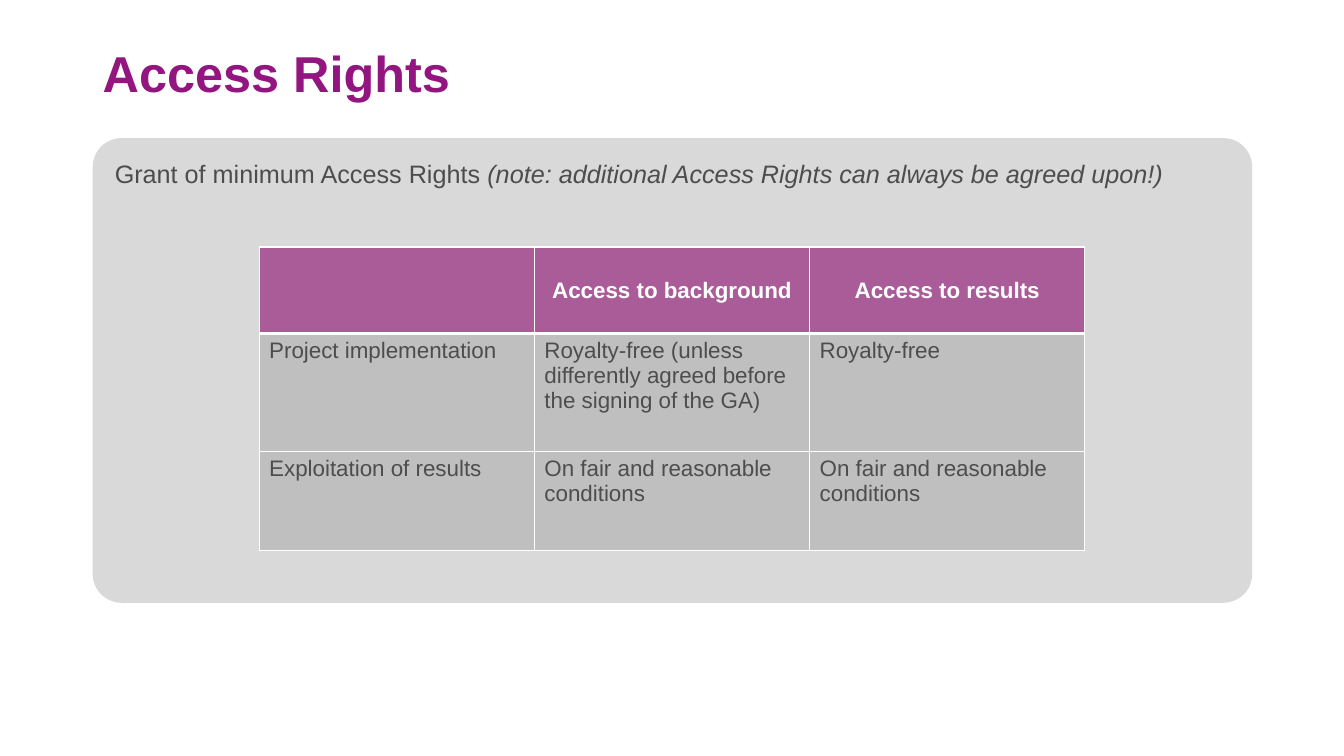
import pptx
import pptx.util
import pptx.dml.color
import pptx.enum.shapes
import pptx.enum.text
import pptx.oxml.ns
from lxml import etree

Inches, Pt = pptx.util.Inches, pptx.util.Pt
ALIGN, ANCHOR = pptx.enum.text.PP_ALIGN, pptx.enum.text.MSO_ANCHOR
GREY, WHITE = "4D4D4D", "FFFFFF"


def paint(fmt, color):
    """Give a fill or a font a solid colour."""
    if hasattr(fmt, "solid"):
        fmt.solid()
        fmt.fore_color.rgb = pptx.dml.color.RGBColor.from_string(color)
    else:
        fmt.color.rgb = pptx.dml.color.RGBColor.from_string(color)


def write(para, text, size=16, color=GREY, bold=False, italic=False, align=ALIGN.LEFT):
    para.alignment = align
    run = para.add_run()
    run.text = text
    font = run.font
    font.name, font.size, font.bold, font.italic = "Arial", Pt(size), bold, italic
    paint(font, color)


deck = pptx.Presentation()
deck.slide_width, deck.slide_height = Inches(13.33), Inches(7.5)
slide = deck.slides.add_slide(deck.slide_layouts[6])
shapes = slide.shapes

# Title
title = shapes.add_textbox(Inches(0.92), Inches(0.51), Inches(11.5), Inches(0.52)).text_frame
title.word_wrap = True
title.vertical_anchor = ANCHOR.BOTTOM
title.margin_bottom = 0
title.paragraphs[0].line_spacing = 0.9
write(title.paragraphs[0], "Access Rights", size=36, color="931680", bold=True)

# Grey panel
panel = shapes.add_shape(pptx.enum.shapes.MSO_SHAPE.ROUNDED_RECTANGLE,
                         Inches(0.92), Inches(1.37), Inches(11.5), Inches(4.61))
panel.adjustments[0] = 0.062
panel.shadow.inherit = False
paint(panel.fill, "D9D9D9")
panel.line.fill.background()

# Lead sentence
lead = shapes.add_textbox(Inches(1.04), Inches(1.52), Inches(11.26), Inches(0.4)).text_frame
lead.word_wrap = True
write(lead.paragraphs[0], "Grant of minimum Access Rights ", size=18)
write(lead.paragraphs[0], "(note: additional Access Rights can always be agreed upon!)",
      size=18, italic=True)

# Table of rights
rows = [
    ["", "Access to background", "Access to results"],
    ["Project implementation",
     "Royalty-free (unless differently agreed before the signing of the GA)",
     "Royalty-free"],
    ["Exploitation of results"] + ["On fair and reasonable conditions"] * 2,
]
table = shapes.add_table(3, 3, Inches(2.57), Inches(2.45), Inches(8.19), Inches(3.01)).table
table.horz_banding = False
for col in table.columns:
    col.width = Inches(2.73)
for row, height in zip(table.rows, [0.86, 1.17, 0.98]):
    row.height = Inches(height)

for r, texts in enumerate(rows):
    for c, text in enumerate(texts):
        cell = table.cell(r, c)
        head = r == 0
        # Borders, with a thick rule under the header
        props = cell._tc.get_or_add_tcPr()
        for side in "LRTB":
            thick = (r, side) in [(0, "B"), (1, "T")]
            line = etree.SubElement(props, pptx.oxml.ns.qn("a:ln" + side),
                                    w=str(Pt(3 if thick else 1)))
            fill = etree.SubElement(line, pptx.oxml.ns.qn("a:solidFill"))
            etree.SubElement(fill, pptx.oxml.ns.qn("a:srgbClr"), val=WHITE)
        paint(cell.fill, "AA5C99" if head else "BFBFBF")
        cell.vertical_anchor = ANCHOR.MIDDLE if head else ANCHOR.TOP
        if text:
            write(cell.text_frame.paragraphs[0], text, bold=head,
                  color=WHITE if head else GREY,
                  align=ALIGN.CENTER if head else ALIGN.LEFT)

deck.save("out.pptx")
